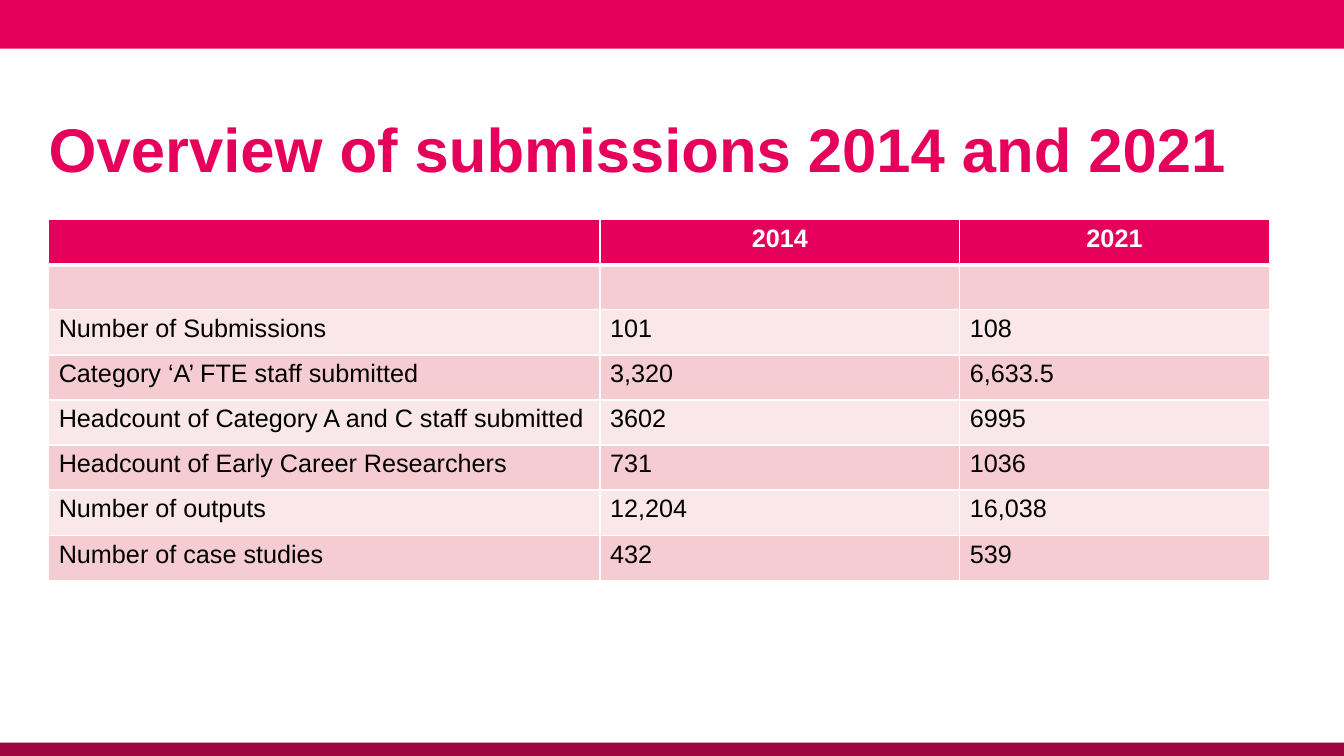
from dataclasses import dataclass

import pptx
import pptx.dml.color
import pptx.enum.shapes
import pptx.enum.text
import pptx.oxml
import pptx.oxml.ns
import pptx.util

Pt = pptx.util.Pt
ALIGN = pptx.enum.text.PP_ALIGN

COLORS = {
    "pink": "E6005B",
    "wine": "9E043D",
    "head": "E5005B",
    "dark": "F5CCD2",
    "light": "FAE7EA",
    "white": "FFFFFF",
    "black": "000000",
}
WIDTH, HEIGHT = 960, 540
LEFT = 34.8
COLS = (393.8, 257, 221)
ROW = 32.2
ROWS = (
    ("", "2014", "2021"),
    ("", "", ""),
    ("Number of Submissions", "101", "108"),
    ("Category ‘A’ FTE staff submitted", "3,320", "6,633.5"),
    ("Headcount of Category A and C staff submitted", "3602", "6995"),
    ("Headcount of Early Career Researchers", "731", "1036"),
    ("Number of outputs", "12,204", "16,038"),
    ("Number of case studies", "432", "539"),
)


@dataclass
class Band:
    top: float
    height: float
    color: str


BANDS = (Band(0, 34.8, "pink"), Band(530.4, 9.6, "wine"))


def rgb(name: str) -> pptx.dml.color.RGBColor:
    return pptx.dml.color.RGBColor.from_string(COLORS[name])


def style(font, size: float, color: str, bold: bool) -> None:
    font.name = "Arial"
    font.size = Pt(size)
    font.bold = bold
    font.color.rgb = rgb(color)


def add_band(slide, band: Band) -> None:
    shape = slide.shapes.add_shape(
        pptx.enum.shapes.MSO_SHAPE.RECTANGLE,
        Pt(0), Pt(band.top), Pt(WIDTH), Pt(band.height))
    shape.shadow.inherit = False
    shape.fill.solid()
    shape.fill.fore_color.rgb = rgb(band.color)
    shape.line.fill.background()


def add_title(slide, text: str) -> None:
    box = slide.shapes.add_textbox(Pt(LEFT), Pt(66.4), Pt(890), Pt(79.2))
    frame = box.text_frame
    frame.word_wrap = True
    frame.vertical_anchor = pptx.enum.text.MSO_ANCHOR.MIDDLE
    frame.margin_left = 0
    frame.text = text
    style(frame.paragraphs[0].runs[0].font, 44, "pink", True)


def set_edges(cell, top: float, bottom: float) -> None:
    """Draw white cell borders with the given top and bottom widths."""
    props = cell._tc.get_or_add_tcPr()
    edges = {"L": 1, "R": 1, "T": top, "B": bottom}
    for spot, (side, width) in enumerate(edges.items()):
        props.insert(spot, pptx.oxml.parse_xml(
            f'<a:ln{side} {pptx.oxml.ns.nsdecls("a")} w="{Pt(width)}">'
            f'<a:solidFill><a:srgbClr val="{COLORS["white"]}"/></a:solidFill>'
            f'</a:ln{side}>'))


def fill_cell(cell, text: str, row: int) -> None:
    head = row == 0
    cell.fill.solid()
    cell.fill.fore_color.rgb = rgb(
        "head" if head else "dark" if row % 2 else "light")
    set_edges(cell, 3 if row == 1 else 1, 3 if head else 1)
    cell.text_frame.text = text
    para = cell.text_frame.paragraphs[0]
    para.alignment = ALIGN.CENTER if head else ALIGN.LEFT
    style(para.font, 18, "white" if head else "black", head)
    for run in para.runs:
        style(run.font, 18, "white" if head else "black", head)


def add_grid(slide) -> None:
    table = slide.shapes.add_table(
        len(ROWS), len(COLS), Pt(LEFT), Pt(157),
        Pt(sum(COLS)), Pt(ROW * len(ROWS))).table
    for col, width in zip(table.columns, COLS):
        col.width = Pt(width)
    for row, texts in enumerate(ROWS):
        table.rows[row].height = Pt(ROW)
        for col, text in enumerate(texts):
            fill_cell(table.cell(row, col), text, row)


def main() -> None:
    deck = pptx.Presentation()
    deck.slide_width, deck.slide_height = Pt(WIDTH), Pt(HEIGHT)
    slide = deck.slides.add_slide(deck.slide_layouts[6])
    for band in BANDS:
        add_band(slide, band)
    add_grid(slide)
    add_title(slide, "Overview of submissions 2014 and 2021")
    deck.save("out.pptx")


if __name__ == "__main__":
    main()
